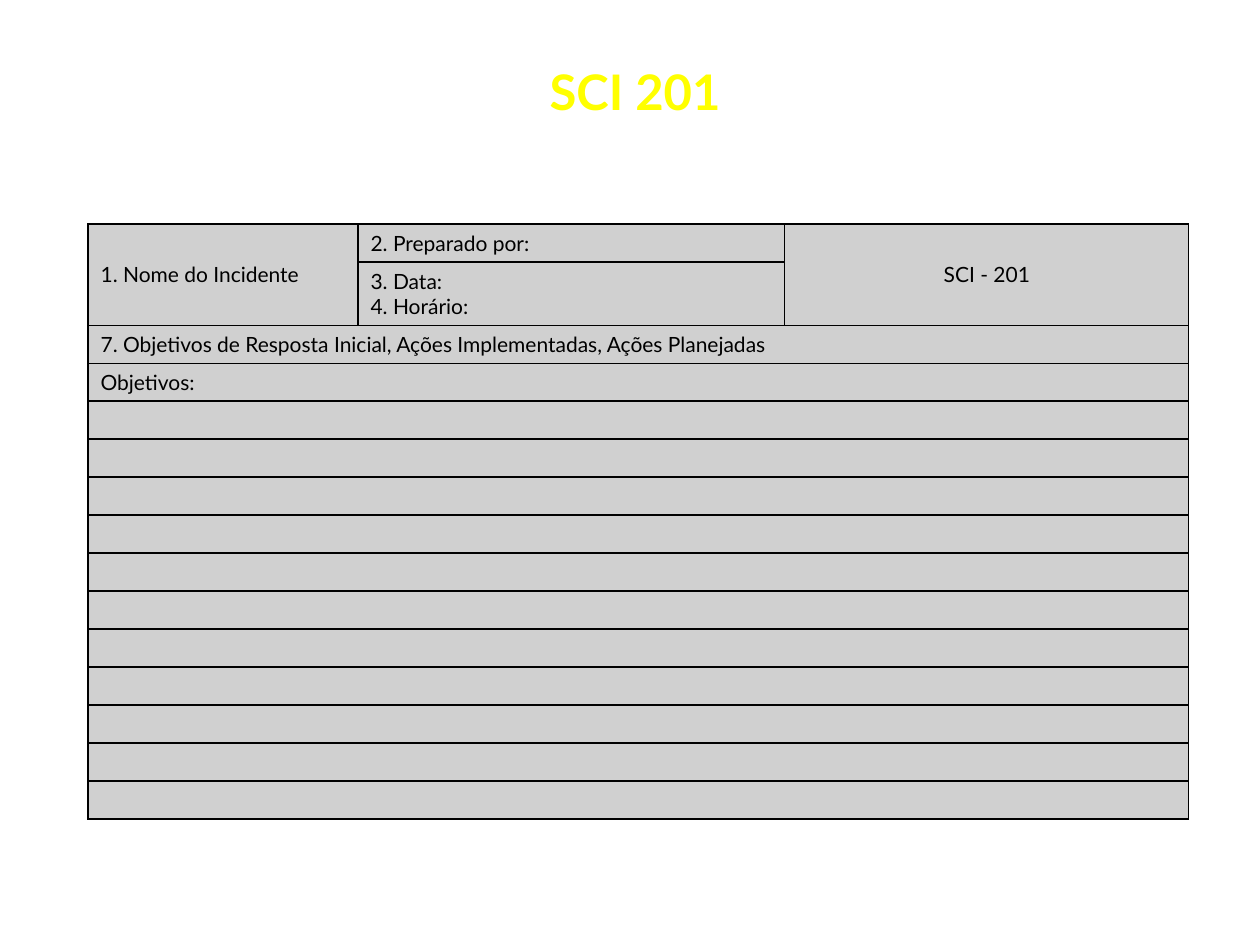
from lxml import etree
from pptx import Presentation
from pptx.dml.color import RGBColor
from pptx.enum.text import MSO_ANCHOR, MSO_AUTO_SIZE, PP_ALIGN
from pptx.oxml.ns import qn
from pptx.util import Pt

MIDDLE = MSO_ANCHOR.MIDDLE
FIXED = MSO_AUTO_SIZE.NONE
LEFT, CENTER = PP_ALIGN.LEFT, PP_ALIGN.CENTER
BLACK = RGBColor(0, 0, 0)
GRAY = RGBColor(0xD0, 0xD0, 0xD0)
YELLOW = RGBColor(0xFF, 0xFF, 0)
SCALE = 914400 / 126
COLS = [270, 427, 404]
ROWS = [38, 63] + [38] * 13
MERGES = [(0, 0, 1, 0), (0, 2, 1, 2)] + [(row, 0, row, 2) for row in range(2, len(ROWS))]
TEXTS = {
    (0, 0): "1. Nome do Incidente",
    (0, 1): "2. Preparado por:",
    (0, 2): "SCI - 201",
    (1, 1): "3. Data:\n4. Horário:",
    (2, 0): "7. Objetivos de Resposta Inicial, Ações Implementadas, Ações Planejadas",
    (3, 0): "Objetivos:",
}


def px(num):
    """Turn px into EMU."""
    return round(num * SCALE)


class Form:
    """Holds the style and the current slide."""

    font = "Lato"
    size = 12
    line = 0.75

    def __init__(self, deck):
        self.slide = deck.slides.add_slide(deck.slide_layouts[5])

    def label(self, frame, text, size, color, align, bold=False):
        """Set the text of a frame and format it."""
        frame.text = text
        for para in frame.paragraphs:
            para.alignment = align
            for run in para.runs:
                run.font.name = self.font
                run.font.size = Pt(size)
                run.font.bold = bold
                run.font.color.rgb = color
            if not para.runs:
                end = etree.SubElement(para._p, qn("a:endParaRPr"), sz=str(size * 100))
                etree.SubElement(end, qn("a:latin"), typeface=self.font)

    def title(self, text, left, top, width, height):
        """Place the title."""
        shape = self.slide.shapes.title
        shape.left, shape.top = px(left), px(top)
        shape.width, shape.height = px(width), px(height)
        frame = shape.text_frame
        frame.auto_size = FIXED
        frame.vertical_anchor = MIDDLE
        self.label(frame, text, 28, YELLOW, CENTER, True)

    def border(self, cell):
        """Draw the four sides of a cell."""
        props = cell._tc.get_or_add_tcPr()
        for side in ("lnL", "lnR", "lnT", "lnB"):
            line = etree.SubElement(props, qn(f"a:{side}"), w=str(int(Pt(self.line))))
            fill = etree.SubElement(line, qn("a:solidFill"))
            etree.SubElement(fill, qn("a:srgbClr"), val=str(BLACK))

    def table(self, left, top):
        """Add the form table."""
        frame = self.slide.shapes.add_table(
            len(ROWS), len(COLS), px(left), px(top), px(sum(COLS)), px(sum(ROWS)))
        table = frame.table
        table.first_row = table.horz_banding = False
        for col, width in zip(table.columns, COLS):
            col.width = px(width)
        for row, height in zip(table.rows, ROWS):
            row.height = px(height)
        for first_row, first_col, last_row, last_col in MERGES:
            table.cell(first_row, first_col).merge(table.cell(last_row, last_col))
        for row in range(len(ROWS)):
            for col in range(len(COLS)):
                cell = table.cell(row, col)
                align = CENTER if col == 2 else LEFT
                self.label(cell.text_frame, TEXTS.get((row, col), ""), self.size, BLACK, align)
                if row < 2:
                    cell.vertical_anchor = MIDDLE
                self.border(cell)
                cell.fill.solid()
                cell.fill.fore_color.rgb = GRAY


def main():
    """Build the slide."""
    deck = Presentation()
    deck.slide_width, deck.slide_height = px(1260), px(945)
    form = Form(deck)
    form.title("SCI 201", 243, 55, 784, 72)
    form.table(88, 224)
    deck.save("out.pptx")


if __name__ == "__main__":
    main()
